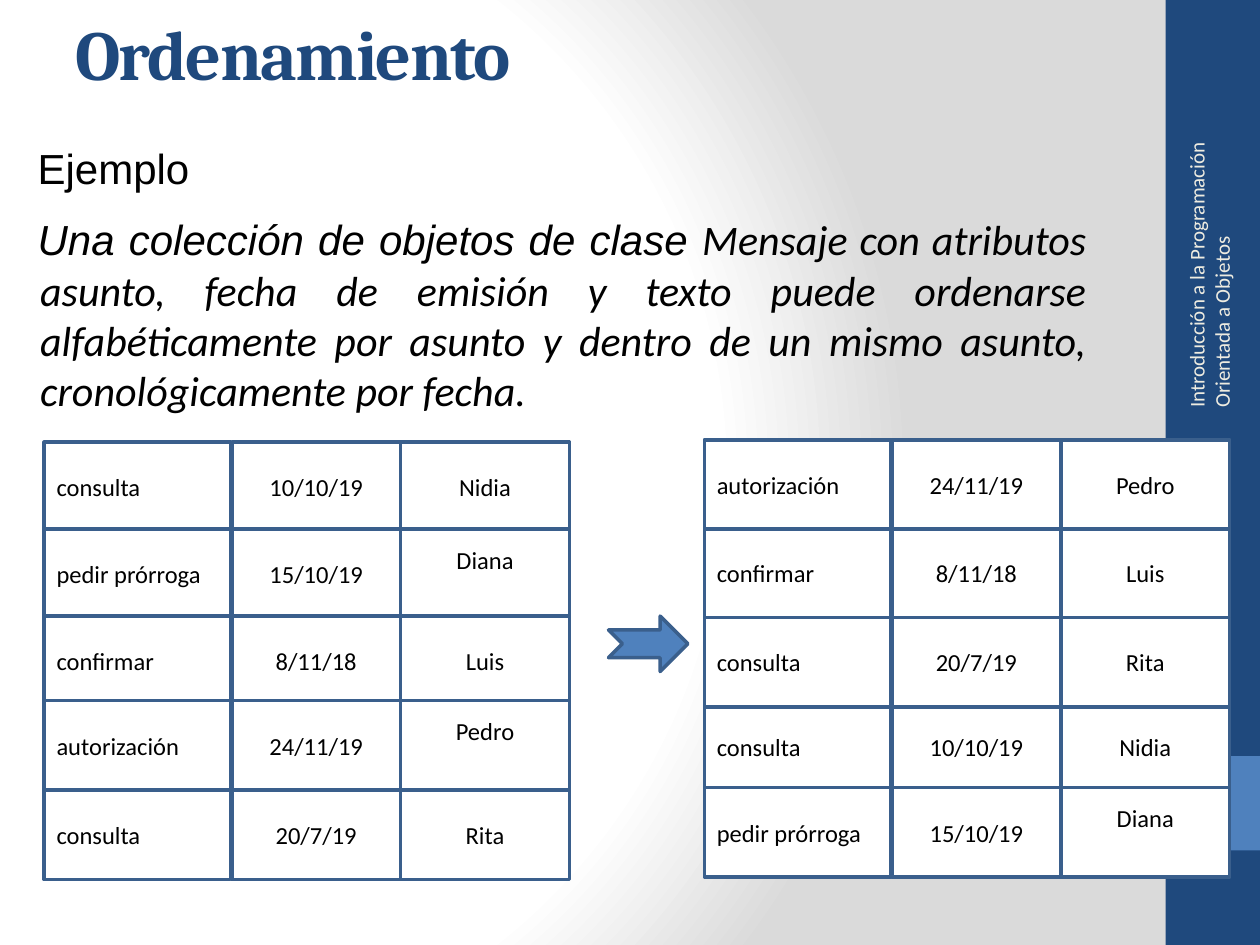
from dataclasses import dataclass

from lxml import etree
from pptx import Presentation
from pptx.dml.color import RGBColor
from pptx.enum.shapes import MSO_SHAPE as SHAPE
from pptx.enum.text import MSO_ANCHOR as ANCHOR, PP_ALIGN as ALIGN
from pptx.oxml import parse_xml
from pptx.oxml.ns import nsdecls, qn
from pptx.util import Inches, Pt

NAVY, BLUE, EDGE = "1F497D", "4F81BD", "3A5F8C"
WHITE, BLACK, CREAM, GREY = "FFFFFF", "000000", "EEECE1", "DADADA"
COLUMNS = ((0, 1.48), (1.49, 1.34), (2.83, 1.34))  # offset, width
ROW_H = 0.71


@dataclass
class Message:
    top: float
    subject: str
    date: str
    author: str
    raised: bool = False  # author sits half a line above the middle


def rgb(color: str) -> RGBColor:
    return RGBColor.from_string(color)


def add_run(p, text: str, size: float, font: str, color: str = BLACK,
            bold: bool = False, italic: bool = False):
    r = p.add_run()
    r.text = text
    f = r.font
    f.size, f.name, f.bold, f.italic = Pt(size), font, bold, italic
    f.color.rgb = rgb(color)
    return r


def add_shape(s, kind, x: float, y: float, w: float, h: float,
              fill: str, line: str = ""):
    sp = s.shapes.add_shape(kind, Inches(x), Inches(y), Inches(w), Inches(h))
    sp.shadow.inherit = False
    sp.fill.solid()
    sp.fill.fore_color.rgb = rgb(fill)
    if line:
        sp.line.color.rgb = rgb(line)
        sp.line.width = Pt(2)
    else:
        sp.line.fill.background()
    return sp


def add_text(s, x: float, y: float, w: float, h: float, anchor=ANCHOR.MIDDLE):
    sp = s.shapes.add_textbox(Inches(x), Inches(y), Inches(w), Inches(h))
    sp.text_frame.word_wrap = True
    sp.text_frame.vertical_anchor = anchor
    return sp


def add_cell(s, x: float, y: float, w: float, text: str, align,
             raised: bool = False) -> None:
    tf = add_shape(s, SHAPE.RECTANGLE, x, y, w, ROW_H, WHITE, EDGE).text_frame
    tf.word_wrap = True
    tf.vertical_anchor = ANCHOR.MIDDLE
    if raised:
        tf.margin_bottom = Inches(0.28)
    p = tf.paragraphs[0]
    p.alignment = align
    add_run(p, text, 14, "Calibri")


def add_messages(s, left: float, messages: list[Message]) -> None:
    for m in messages:
        for i, text in enumerate((m.subject, m.date, m.author)):
            offset, width = COLUMNS[i]
            add_cell(s, left + offset, m.top, width, text,
                     ALIGN.CENTER if i else ALIGN.LEFT, m.raised and i == 2)


def set_background(s) -> None:
    fill = s.background.fill
    fill.solid()
    stops = "".join(f'<a:gs pos="{pos}000"><a:srgbClr val="{c}"/></a:gs>'
                    for pos, c in ((0, WHITE), (75, WHITE), (100, GREY)))
    grad = parse_xml(
        f'<a:gradFill {nsdecls("a")} rotWithShape="1"><a:gsLst>{stops}</a:gsLst>'
        '<a:path path="circle"><a:fillToRect l="20000" t="50000" r="100000" '
        'b="50000"/></a:path></a:gradFill>')
    solid = next(s.element.iter(qn("a:solidFill")))
    solid.getparent().replace(solid, grad)


def main() -> None:
    prs = Presentation()
    prs.slide_width, prs.slide_height = Inches(10), Inches(7.5)
    s = prs.slides.add_slide(prs.slide_layouts[6])
    set_background(s)

    # Side band with the course name
    add_shape(s, SHAPE.RECTANGLE, 9.25, 0, 0.75, 7.5, NAVY)
    add_shape(s, SHAPE.RECTANGLE, 9.25, 6, 0.75, 0.75, BLUE)
    course = add_text(s, 8.26, 1.8, 2.67, 0.4)
    course.rotation = 270
    add_run(course.text_frame.paragraphs[0],
            "Introducción a la Programación Orientada a Objetos",
            12, "Calibri", CREAM)

    # Title
    title = add_text(s, 0.5, 0.09, 8.98, 0.66)
    r = add_run(title.text_frame.paragraphs[0], "Ordenamiento",
                40, "Cambria", NAVY, bold=True)
    r.font._element.set("spc", "-100")

    # Example statement
    tf = add_text(s, 0.2, 1.08, 8.52, 2.32, ANCHOR.TOP).text_frame
    heading, body = tf.paragraphs[0], tf.add_paragraph()
    for p, before in ((heading, 3), (body, 12)):
        p.alignment = ALIGN.JUSTIFY
        p.space_before = Pt(before)
        pPr = p._p.get_or_add_pPr()
        pPr.set("marL", str(Inches(0.02)))
        pPr.set("indent", str(-Inches(0.02)))
    add_run(heading, "Ejemplo", 24, "Arial")
    add_run(body, "Una colección de objetos de clase ", 24, "Arial", italic=True)
    add_run(body, "Mensaje con atributos asunto, fecha de emisión y texto puede "
            "ordenarse alfabéticamente por asunto y dentro de un mismo asunto, "
            "cronológicamente por fecha.", 24, "Calibri", italic=True)

    # Messages before sorting
    add_messages(s, 0.35, [
        Message(3.51, "consulta", "10/10/19", "Nidia"),
        Message(4.2, "pedir prórroga", "15/10/19", "Diana", True),
        Message(4.89, "confirmar", "8/11/18", "Luis"),
        Message(5.56, "autorización", "24/11/19", "Pedro", True),
        Message(6.27, "consulta", "20/7/19", "Rita"),
    ])
    add_shape(s, SHAPE.NOTCHED_RIGHT_ARROW, 4.83, 4.89, 0.63, 0.44, BLUE, EDGE)

    # Messages after sorting, from back to front
    add_messages(s, 5.59, [
        Message(5.57, "consulta", "10/10/19", "Nidia"),
        Message(6.25, "pedir prórroga", "15/10/19", "Diana", True),
        Message(4.19, "confirmar", "8/11/18", "Luis"),
        Message(3.49, "autorización", "24/11/19", "Pedro"),
        Message(4.9, "consulta", "20/7/19", "Rita"),
    ])

    prs.save("out.pptx")


if __name__ == "__main__":
    main()
